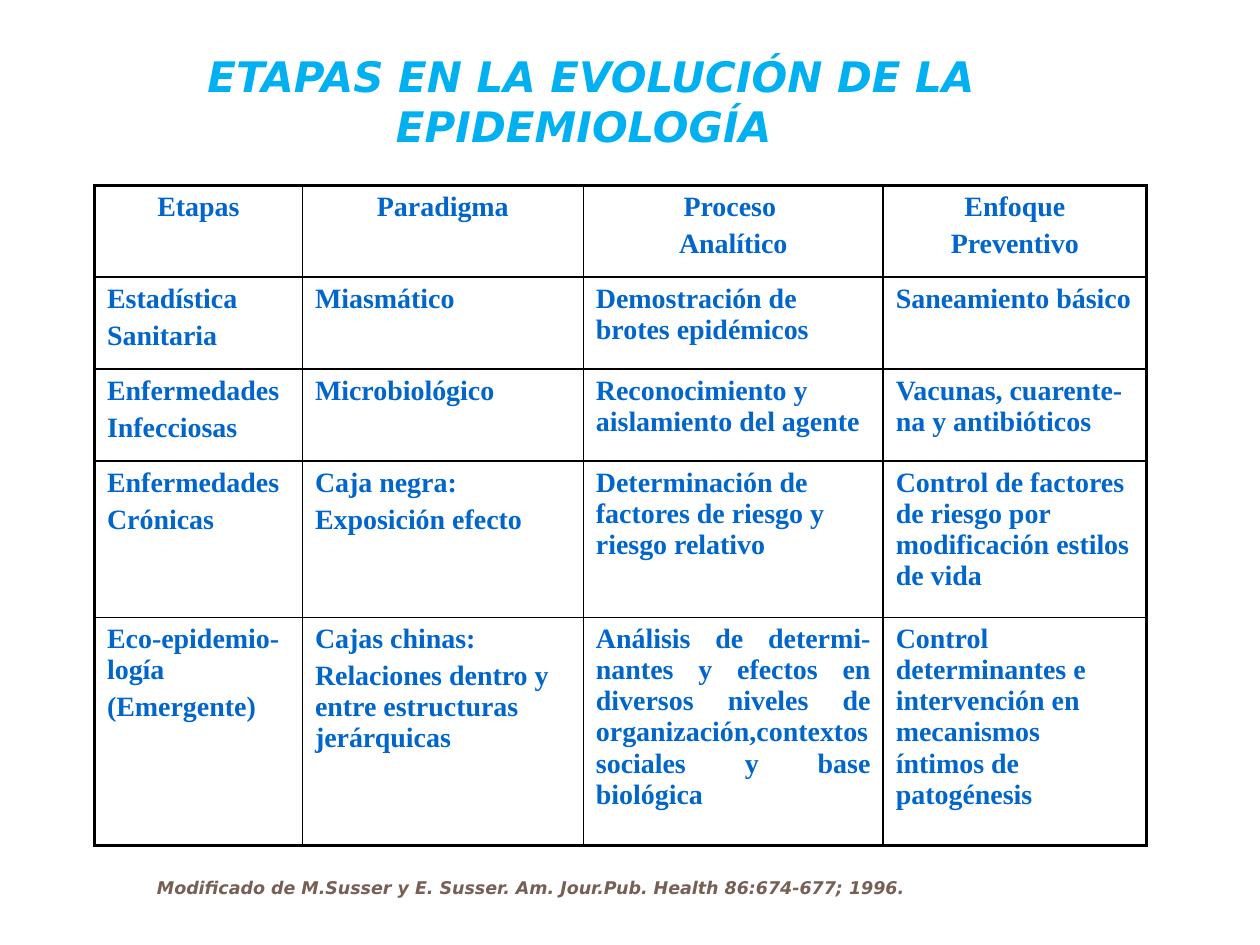
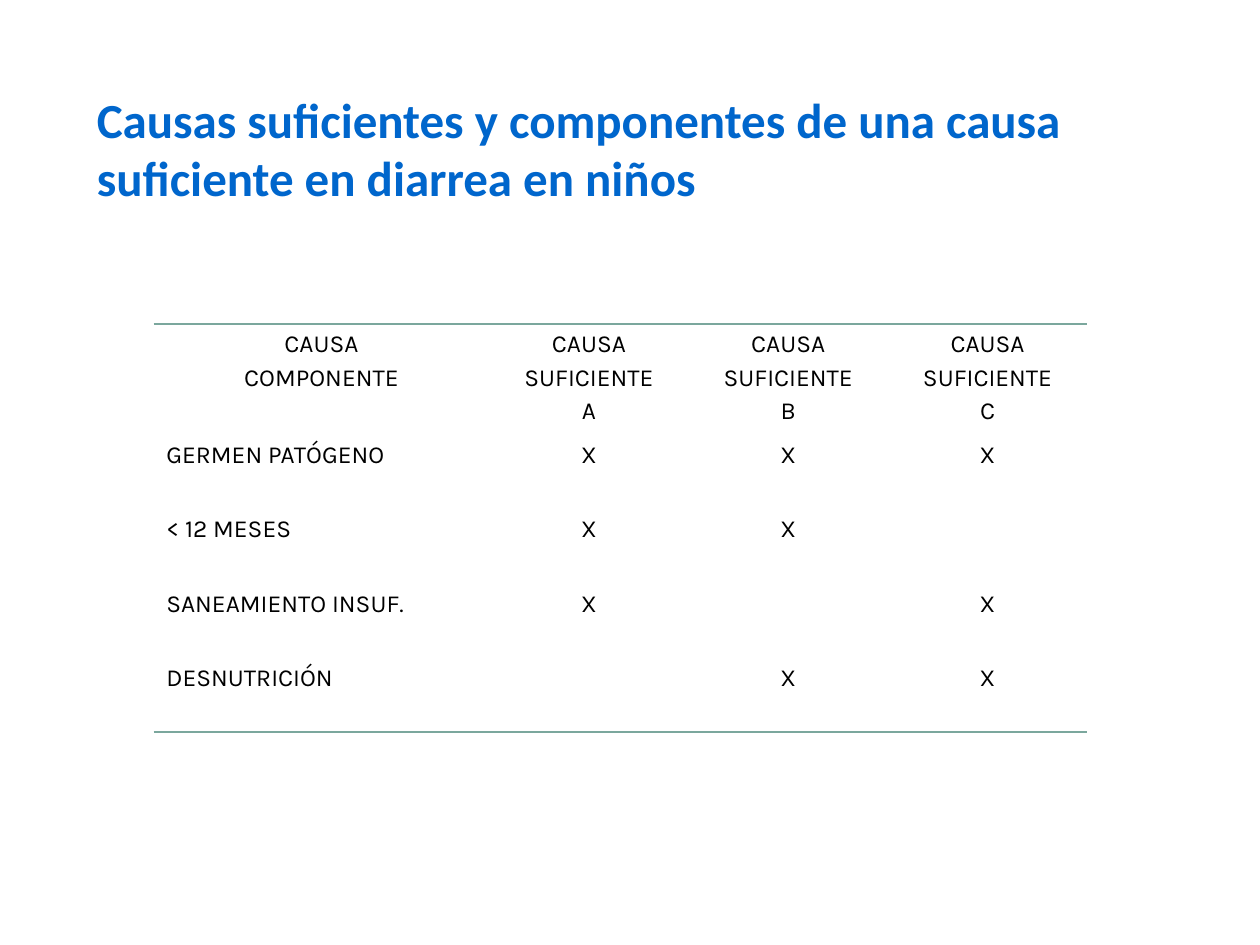
from lxml.etree import SubElement
from pptx import Presentation
from pptx.dml.color import RGBColor as RGB
from pptx.enum.text import MSO_ANCHOR as ANCHOR, PP_ALIGN as ALIGN
from pptx.oxml.ns import qn
from pptx.util import Inches, Pt

W, H = Inches(10), Inches(7.5)
COLORS = {"sky": "00B0F0", "blue": "0066CC", "brown": "775F55",
          "black": "000000", "rule": "7BA79D"}

# Wording: a line break separates paragraphs within a cell
STAGES = [
    ["Etapas", "Paradigma", "Proceso \nAnalítico", "Enfoque\nPreventivo"],
    ["Estadística\nSanitaria", "Miasmático",
     "Demostración de brotes epidémicos", "Saneamiento básico"],
    ["Enfermedades\nInfecciosas", "Microbiológico",
     "Reconocimiento y aislamiento del agente",
     "Vacunas, cuarente-na y antibióticos"],
    ["Enfermedades\nCrónicas", "Caja negra:\nExposición efecto",
     "Determinación de factores de riesgo y riesgo relativo",
     "Control de factores de riesgo por modificación estilos de vida"],
    ["Eco-epidemio-logía\n(Emergente)",
     "Cajas chinas:\nRelaciones dentro y entre estructuras jerárquicas",
     "Análisis de determi-nantes y efectos en diversos niveles de "
     "organización,contextos sociales y base biológica",
     "Control determinantes e intervención en mecanismos íntimos "
     "de patogénesis"],
]
CAUSES = [
    ["CAUSA\nCOMPONENTE"] + [f"CAUSA\nSUFICIENTE\n{c}" for c in "ABC"],
    ["GERMEN PATÓGENO", "X", "X", "X"],
    ["< 12 MESES", "X", "X", ""],
    ["SANEAMIENTO INSUF.", "X", "", "X"],
    ["DESNUTRICIÓN", "", "X", "X"],
]


def place(x, y, w, h):
    """Turn percentages of the slide into lengths."""
    return [int(pct * side / 100) for pct, side in zip((x, y, w, h), (W, H, W, H))]


def write(tf, text, size, font, color, bold=False, italic=False,
          align=ALIGN.LEFT, before=0):
    for i, line in enumerate(text.split("\n")):
        p = tf.paragraphs[0] if i == 0 else tf.add_paragraph()
        p.alignment = align
        p.space_before = Pt(round(size * before, 1))
        r = p.add_run()
        r.text = line
        f = r.font
        f.size, f.name, f.bold, f.italic = Pt(size), font, bold, italic
        f.color.rgb = RGB.from_string(COLORS[color])


def add_text(s, box, text, anchor=ANCHOR.MIDDLE, **fmt):
    tf = s.shapes.add_textbox(*place(*box)).text_frame
    tf.word_wrap = True
    tf.vertical_anchor = anchor
    write(tf, text, **fmt)


def set_borders(cell, color, widths):
    """Draw left, right, top and bottom lines; width 0 means no line."""
    tc_pr = cell._tc.get_or_add_tcPr()
    for side, width in zip("LRTB", widths):
        ln = SubElement(tc_pr, qn(f"a:ln{side}"), w=str(Pt(width)))
        if width:
            fill = SubElement(ln, qn("a:solidFill"))
            SubElement(fill, qn("a:srgbClr"), val=COLORS[color])
        else:
            SubElement(ln, qn("a:noFill"))


def add_grid(s, box, rows, cols, heights, align_of, line, outer, inner, **fmt):
    """Table filling box; outer and inner are (vertical, horizontal) widths."""
    x, y, w, h = place(*box)
    last_row, last_col = len(heights) - 1, len(cols) - 1
    table = s.shapes.add_table(len(heights), len(cols), x, y, w, h).table
    table.first_row = table.horz_banding = False
    for col, share in zip(table.columns, cols):
        col.width = int(w * share / sum(cols))
    for row, share in zip(table.rows, heights):
        row.height = int(h * share / sum(heights))
    for i, texts in enumerate(rows):
        for j, text in enumerate(texts):
            cell = table.cell(i, j)
            edges = (j == 0, j == last_col, i == 0, i == last_row)
            set_borders(cell, line, [(outer if edge else inner)[k // 2]
                                     for k, edge in enumerate(edges)])
            cell.fill.background()
            if text:
                write(cell.text_frame, text, align=align_of(i, j),
                      before=0.2, **fmt)


def stage_align(i, j):
    if i == 0:
        return ALIGN.CENTER
    return ALIGN.JUSTIFY if (i, j) == (4, 2) else ALIGN.LEFT


def cause_align(i, j):
    return ALIGN.CENTER if i == 0 or j > 0 else ALIGN.LEFT


def stages_slide(s):
    # Title
    add_text(s, (4.3, 0, 85.2, 21.33),
             "ETAPAS EN LA EVOLUCIÓN DE LA EPIDEMIOLOGÍA ",
             size=24, font="DejaVu Sans", color="sky", bold=True,
             italic=True, align=ALIGN.CENTER)
    # Stages table
    add_grid(s, (7.5, 19.6, 83.5, 69.87), STAGES,
             cols=(1.65, 2.23, 2.38, 2.09),
             heights=(0.73, 0.73, 0.73, 1.24, 1.81), align_of=stage_align,
             line="black", outer=(2.25, 2.25), inner=(1, 1),
             size=16, font="Times New Roman", color="blue", bold=True)
    # Source note
    add_text(s, (0, 88.8, 84.2, 6.93),
             "Modificado de M.Susser y E. Susser. "
             "Am. Jour.Pub. Health 86:674-677; 1996.",
             anchor=ANCHOR.BOTTOM, size=10, font="DejaVu Sans",
             color="brown", bold=True, italic=True, align=ALIGN.CENTER)


def causes_slide(s):
    # Title
    add_text(s, (6.7, 6.93, 91.1, 17.47),
             "Causas suficientes y componentes de una causa suficiente "
             "en diarrea en niños",
             size=28, font="Calibri", color="blue", bold=True)
    # Causes table, ruled only above and below
    add_grid(s, (12.2, 34.27, 74.1, 43.2), CAUSES,
             cols=(2.66, 1.58, 1.58, 1.58),
             heights=(0.88, 0.59, 0.59, 0.59, 0.59), align_of=cause_align,
             line="rule", outer=(0, 1), inner=(0, 0),
             size=14, font="Karla", color="black")


def main():
    prs = Presentation()
    prs.slide_width, prs.slide_height = W, H
    for build in (stages_slide, causes_slide):
        build(prs.slides.add_slide(prs.slide_layouts[6]))
    prs.save("out.pptx")


if __name__ == "__main__":
    main()
